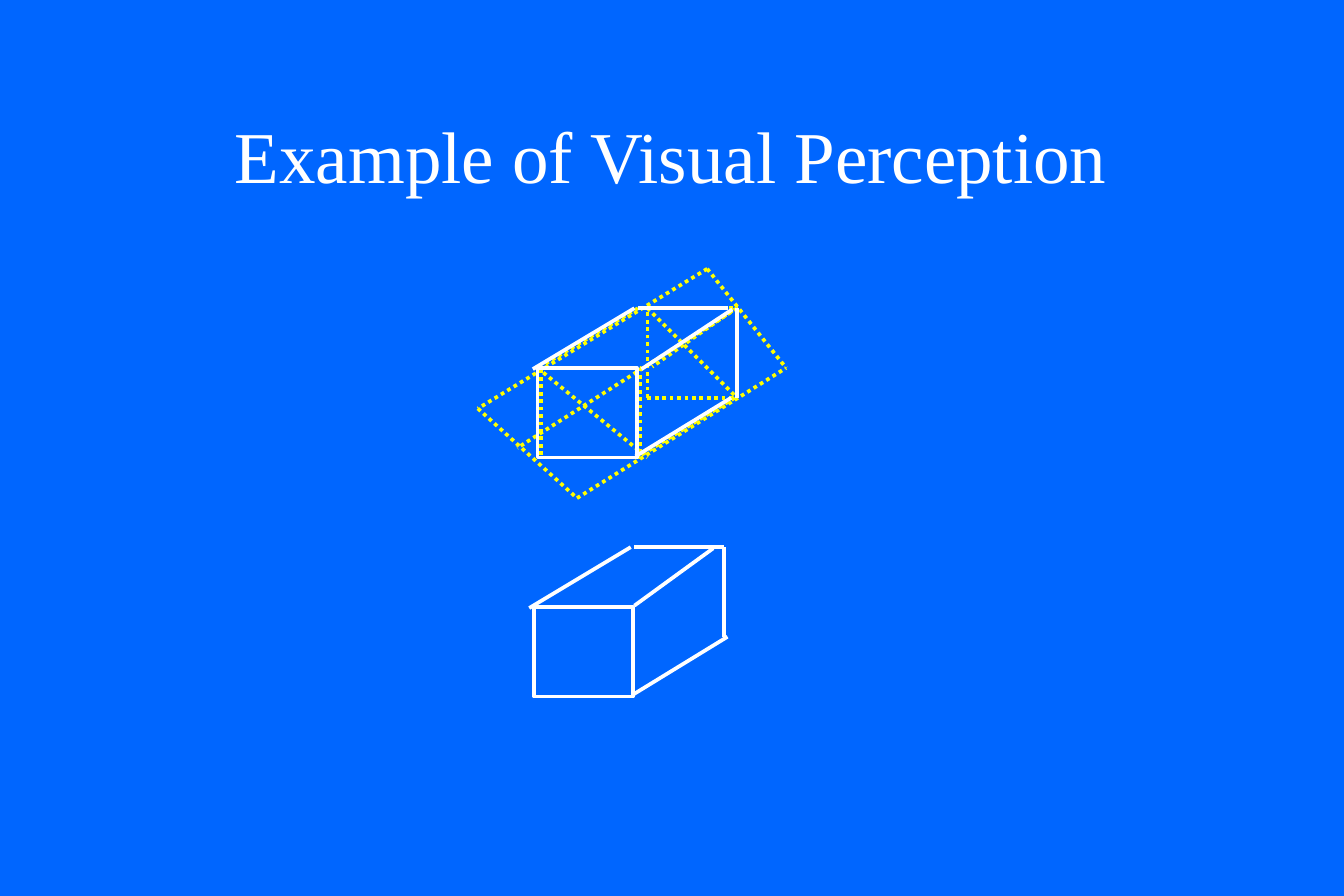
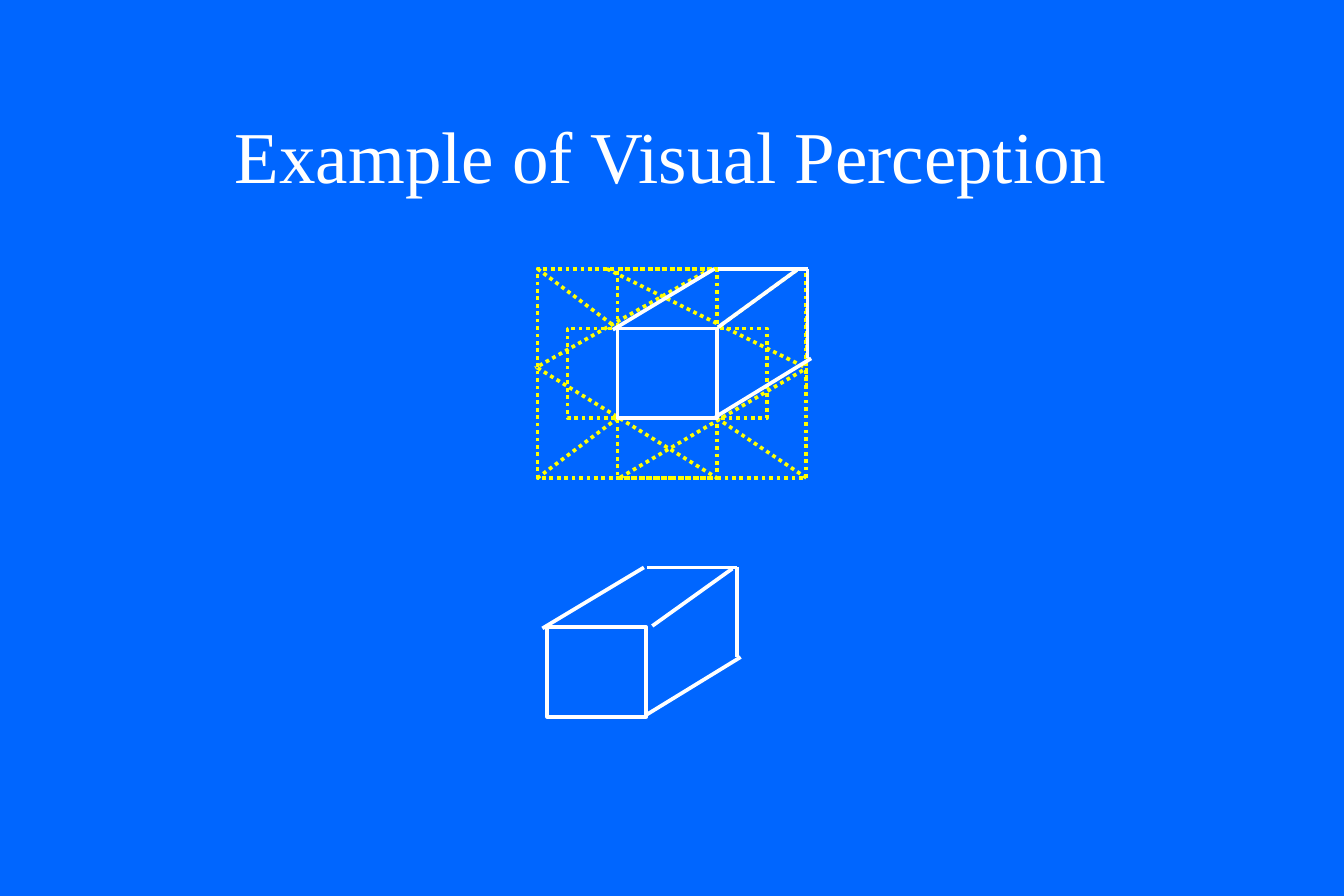
"""Build two slides that show a box drawing and its dotted guide lines."""
from lxml.etree import SubElement
from pptx import Presentation
from pptx.dml.color import RGBColor
from pptx.enum.dml import MSO_LINE
from pptx.enum.shapes import MSO_CONNECTOR, MSO_SHAPE
from pptx.enum.text import MSO_ANCHOR, PP_ALIGN
from pptx.oxml.ns import qn
from pptx.util import Inches, Pt

WIDTH, HEIGHT = 11.25, 7.5
BLUE, WHITE, YELLOW = "0066FF", "FFFFFF", "FFFF00"
FONT = "Times New Roman"
TITLE = "Example of Visual Perception"
TITLE_BOX = (0.84, 0.67, 9.56, 1.25)
FACE = (0.83, 0.75)

EDGES = {
    "right depth": (1.5, -0.49, 0.84, -0.01),
    "base depth": (1.62, 0.25, 0.82, 0.74),
    "left depth": (0.81, -0.5, -0.04, 0.01),
    "back top": (0.84, -0.5, 1.59, -0.5),
    "back side": (1.59, -0.5, 1.59, 0.25),
}

SLIDES = [
    [
        {"color": WHITE, "front": (4.47, 5.08)},
        {"color": YELLOW, "front": (4.53, 3.08), "changes": {
            "right depth": (1.6, -0.48, 0.93, -0.01),
            "back top": (0.89, -0.5, 1.64, -0.5),
            "back side": (1.64, -0.5, 1.64, 0.25)}},
        {"color": YELLOW, "lines": [
            (5.92, 2.25, 4, 3.42), (4, 3.42, 4.83, 4.17),
            (4.83, 4.17, 6.58, 3.08), (5.92, 2.25, 6.58, 3.08),
            (6.17, 2.58, 4.33, 3.75), (4.5, 3.08, 5.42, 3.83),
            (5.42, 3.33, 5.42, 2.58), (5.42, 3.33, 6.17, 3.33),
            (5.42, 2.58, 6.17, 3.33)]},
        {"color": WHITE, "front": (4.5, 3.08), "changes": {
            "right depth": (1.63, -0.49, 0.87, 0.01),
            "back side": (1.67, -0.5, 1.67, 0.25)}},
    ],
    [
        {"color": YELLOW, "front": (5.17, 2.75), "changes": {
            "base depth": (1.55, 0.35, 0, 1.26),
            "left depth": (0.78, -0.5, -0.69, 0.33),
            "back side": (1.58, -0.17, 1.58, 0.5)}},
        {"color": YELLOW,
         "frames": [(4.5, 2.25, 2.25, 1.75), (5.17, 2.25, 0.83, 1.75),
                    (4.75, 2.75, 1.67, 0.75)],
         "lines": [(4.5, 3.08, 6, 4), (5.08, 2.25, 6.75, 3.08),
                   (5.17, 3.5, 4.5, 4), (4.5, 2.25, 5.17, 2.75),
                   (6, 3.5, 6.75, 4)]},
        {"color": WHITE, "front": (4.58, 5.25), "changes": {
            "right depth": (1.55, -0.49, 0.88, -0.01)}},
        {"color": WHITE, "front": (5.17, 2.75)},
    ],
]


def rgb(value):
    return RGBColor.from_string(value)


def inches(values):
    return [Inches(value) for value in values]


def style_line(line, color):
    line.color.rgb = rgb(color)
    line.width = Pt(2.25)
    if color == YELLOW:
        line.dash_style = MSO_LINE.ROUND_DOT


def add_frame(slide, box, color):
    shape = slide.shapes.add_shape(MSO_SHAPE.RECTANGLE, *inches(box))
    shape.shadow.inherit = False
    shape.fill.background()
    style_line(shape.line, color)


def add_line(slide, ends, color):
    connector = slide.shapes.add_connector(MSO_CONNECTOR.STRAIGHT, *inches(ends))
    style_line(connector.line, color)
    SubElement(connector._element.spPr, qn("a:effectLst"))


def add_title(slide):
    frame = slide.shapes.add_textbox(*inches(TITLE_BOX)).text_frame
    frame.word_wrap = True
    frame.vertical_anchor = MSO_ANCHOR.MIDDLE
    paragraph = frame.paragraphs[0]
    paragraph.text = TITLE
    paragraph.alignment = PP_ALIGN.CENTER
    paragraph.font.name = FONT
    paragraph.font.size = Pt(44)
    paragraph.font.color.rgb = rgb(WHITE)


def add_drawing(slide, drawing):
    frames = list(drawing.get("frames", []))
    lines = list(drawing.get("lines", []))
    if "front" in drawing:
        left, top = drawing["front"]
        edges = {**EDGES, **drawing.get("changes", {})}
        frames.append((left, top, *FACE))
        lines += [(left + x1, top + y1, left + x2, top + y2)
                  for x1, y1, x2, y2 in edges.values()]
    for box in frames:
        add_frame(slide, box, drawing["color"])
    for ends in lines:
        add_line(slide, ends, drawing["color"])


def main():
    presentation = Presentation()
    presentation.slide_width, presentation.slide_height = inches((WIDTH, HEIGHT))
    background = presentation.slide_master.background.fill
    background.solid()
    background.fore_color.rgb = rgb(BLUE)
    for drawings in SLIDES:
        slide = presentation.slides.add_slide(presentation.slide_layouts[6])
        add_title(slide)
        for drawing in drawings:
            add_drawing(slide, drawing)
    presentation.save("out.pptx")


if __name__ == "__main__":
    main()
